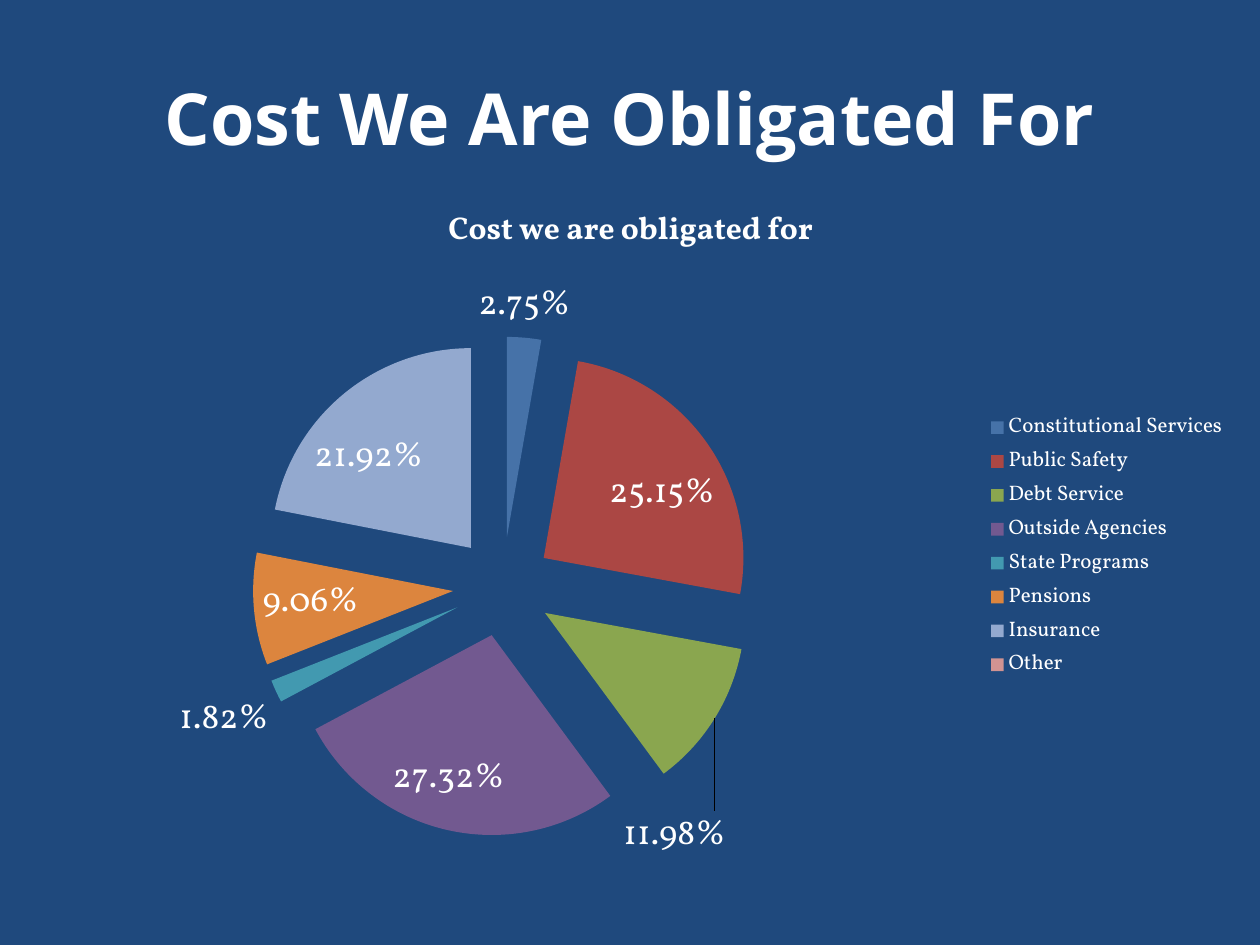
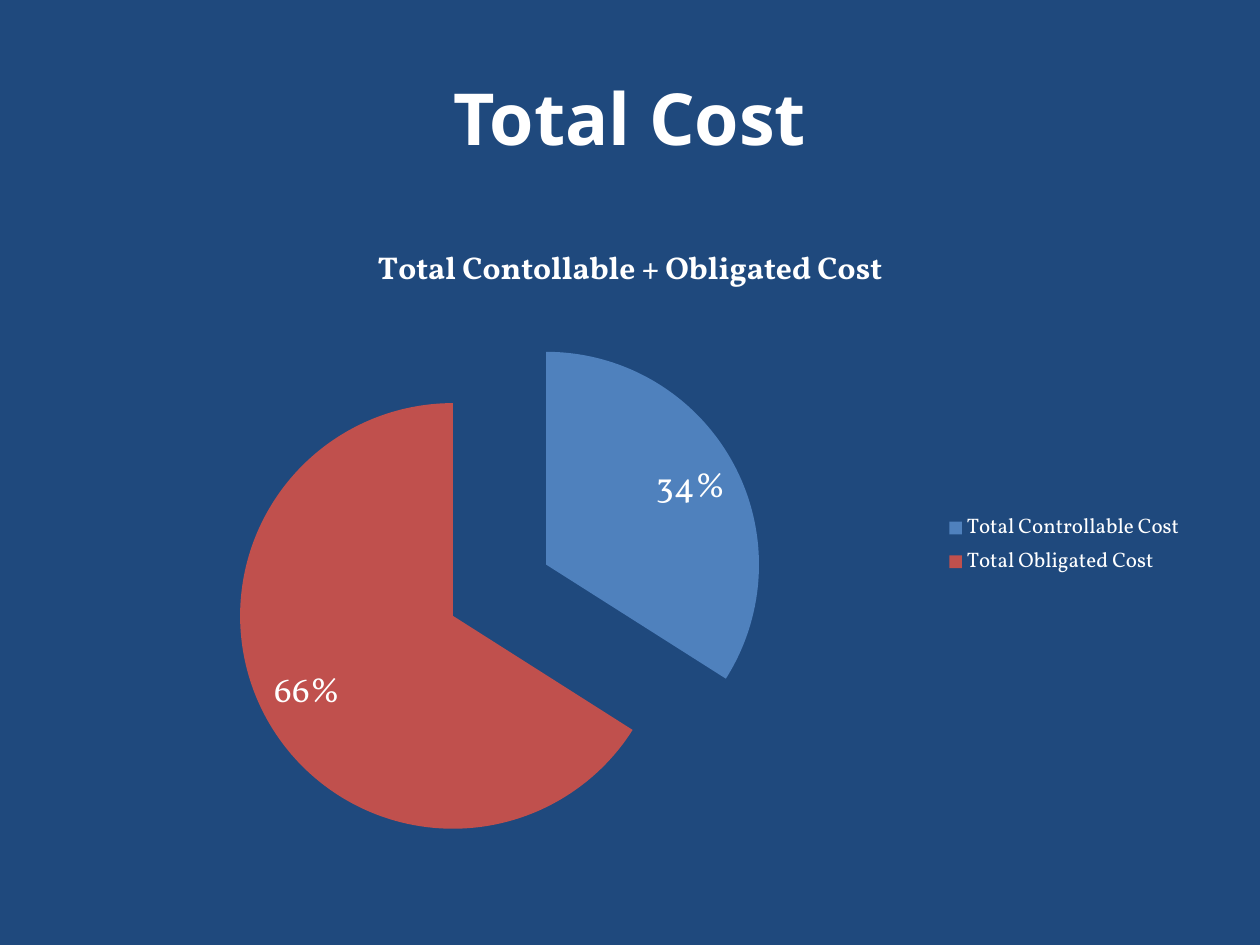
from lxml.etree import SubElement
from pptx import Presentation
from pptx.chart.data import CategoryChartData
from pptx.dml.color import RGBColor
from pptx.enum.chart import XL_CHART_TYPE, XL_LABEL_POSITION, XL_LEGEND_POSITION
from pptx.enum.text import MSO_ANCHOR, PP_ALIGN
from pptx.oxml import parse_xml
from pptx.oxml.ns import nsdecls, qn
from pptx.util import Inches, Pt

BACKGROUND = "1F497D"
WHITE = "FFFFFF"
TITLE_FONT = "Open Sans"
CHART_FONT = "Vollkorn"
TITLE_BOX = (0.5, 0.3, 9, 1.25)
EXPLOSION = 25

# Slices are (category, share, colour); "plot" is x, y, w, h as fractions of the chart.
# "moved_labels" maps a slice to the shift of its label, also in fractions.
SLIDES = [
    {
        "title": "Cost We Are Obligated For",
        "chart_title": "Cost we are obligated for",
        "box": (0.17, 1.42, 9.67, 5.83),
        "plot": (0.19, 0.21, 0.41, 0.69),
        "format": "0.00%",
        "slices": [
            ("Constitutional Services", 0.0275, "4672A8"),
            ("Public Safety", 0.2515, "AB4744"),
            ("Debt Service", 0.1198, "8AA64F"),
            ("Outside Agencies", 0.2732, "725990"),
            ("State Programs", 0.0182, "4299B0"),
            ("Pensions", 0.0906, "DC853E"),
            ("Insurance", 0.2192, "93A9CF"),
            ("Other", 0, "D19392"),
        ],
        "hidden_labels": ["Other"],
        "moved_labels": {"Debt Service": (-0.08, 0.12)},
    },
    {
        "title": "Total Cost",
        "chart_title": "Total Contollable + Obligated Cost",
        "box": (0.5, 1.75, 9, 5.15),
        "plot": (0.15, 0.16, 0.47, 0.82),
        "format": "0%",
        "slices": [
            ("Total Controllable Cost", 0.34, "4F81BD"),
            ("Total Obligated Cost", 0.66, "C0504D"),
        ],
        "hidden_labels": [],
        "moved_labels": {},
    },
]


def color(value):
    return RGBColor.from_string(value)


def style_font(font, size, name=CHART_FONT, bold=False):
    font.name = name
    font.size = Pt(size)
    font.bold = bold
    font.color.rgb = color(WHITE)


def write_text(text_frame, text, **font_format):
    paragraph = text_frame.paragraphs[0]
    paragraph.alignment = PP_ALIGN.CENTER
    run = paragraph.add_run()
    run.text = text
    style_font(run.font, **font_format)


def add_title(slide, text):
    text_frame = slide.shapes.add_textbox(*map(Inches, TITLE_BOX)).text_frame
    text_frame.word_wrap = True
    text_frame.vertical_anchor = MSO_ANCHOR.MIDDLE
    write_text(text_frame, text, size=41, name=TITLE_FONT, bold=True)


def manual_layout(**settings):
    """Return a c:layout element holding the given settings in order."""
    layout = parse_xml(f"<c:layout {nsdecls('c')}><c:manualLayout/></c:layout>")
    for name, value in settings.items():
        SubElement(layout[0], qn(f"c:{name}")).set("val", str(value))
    return layout


def place_plot(chart, x, y, w, h):
    plot_area = chart.plots[0]._element.getparent()
    for old_layout in plot_area.findall(qn("c:layout")):
        plot_area.remove(old_layout)
    plot_area.insert(0, manual_layout(layoutTarget="inner", xMode="edge", yMode="edge",
                                      x=x, y=y, w=w, h=h))


def explode(series):
    explosion = parse_xml(f'<c:explosion {nsdecls("c")} val="{EXPLOSION}"/>')
    series._element.find(qn("c:tx")).addnext(explosion)


def move_label(point, shift):
    label = point.data_label
    style_font(label.font, 20)
    label.position = XL_LABEL_POSITION.OUTSIDE_END
    x, y = shift
    label._dLbl.insert(1, manual_layout(x=x, y=y))


def hide_label(point):
    """Replace everything but the index of the point's label with a delete mark."""
    element = point.data_label._get_or_add_dLbl()
    for child in element[1:]:
        element.remove(child)
    SubElement(element, qn("c:delete")).set("val", "1")


def add_pie(slide, content):
    names, shares, colors = zip(*content["slices"])
    chart_data = CategoryChartData(number_format=content["format"])
    chart_data.categories = names
    chart_data.add_series("Series 1", shares)
    chart = slide.shapes.add_chart(XL_CHART_TYPE.PIE, *map(Inches, content["box"]),
                                   chart_data).chart
    style_font(chart.font, 10)
    chart.has_title = True
    write_text(chart.chart_title.text_frame, content["chart_title"], size=18, bold=True)
    chart.chart_title.include_in_layout = False
    chart.has_legend = True
    chart.legend.position = XL_LEGEND_POSITION.RIGHT
    chart.legend.include_in_layout = False
    style_font(chart.legend.font, 12)
    place_plot(chart, *content["plot"])

    plot = chart.plots[0]
    plot.vary_by_categories = True
    series = plot.series[0]
    explode(series)
    labels = series.data_labels
    labels.show_value = True
    labels.show_percentage = False
    labels.number_format = content["format"]
    labels.number_format_is_linked = False
    labels.position = XL_LABEL_POSITION.BEST_FIT
    style_font(labels.font, 20)

    for index, (name, slice_color) in enumerate(zip(names, colors)):
        point = series.points[index]
        point.format.fill.solid()
        point.format.fill.fore_color.rgb = color(slice_color)
        point.format.line.fill.background()
        if name in content["moved_labels"]:
            move_label(point, content["moved_labels"][name])
        if name in content["hidden_labels"]:
            hide_label(point)


def main():
    presentation = Presentation()
    presentation.slide_width = Inches(10)
    presentation.slide_height = Inches(7.5)
    background = presentation.slide_master.background.fill
    background.solid()
    background.fore_color.rgb = color(BACKGROUND)
    for content in SLIDES:
        slide = presentation.slides.add_slide(presentation.slide_layouts[6])
        add_title(slide, content["title"])
        add_pie(slide, content)
    presentation.save("out.pptx")


if __name__ == "__main__":
    main()
